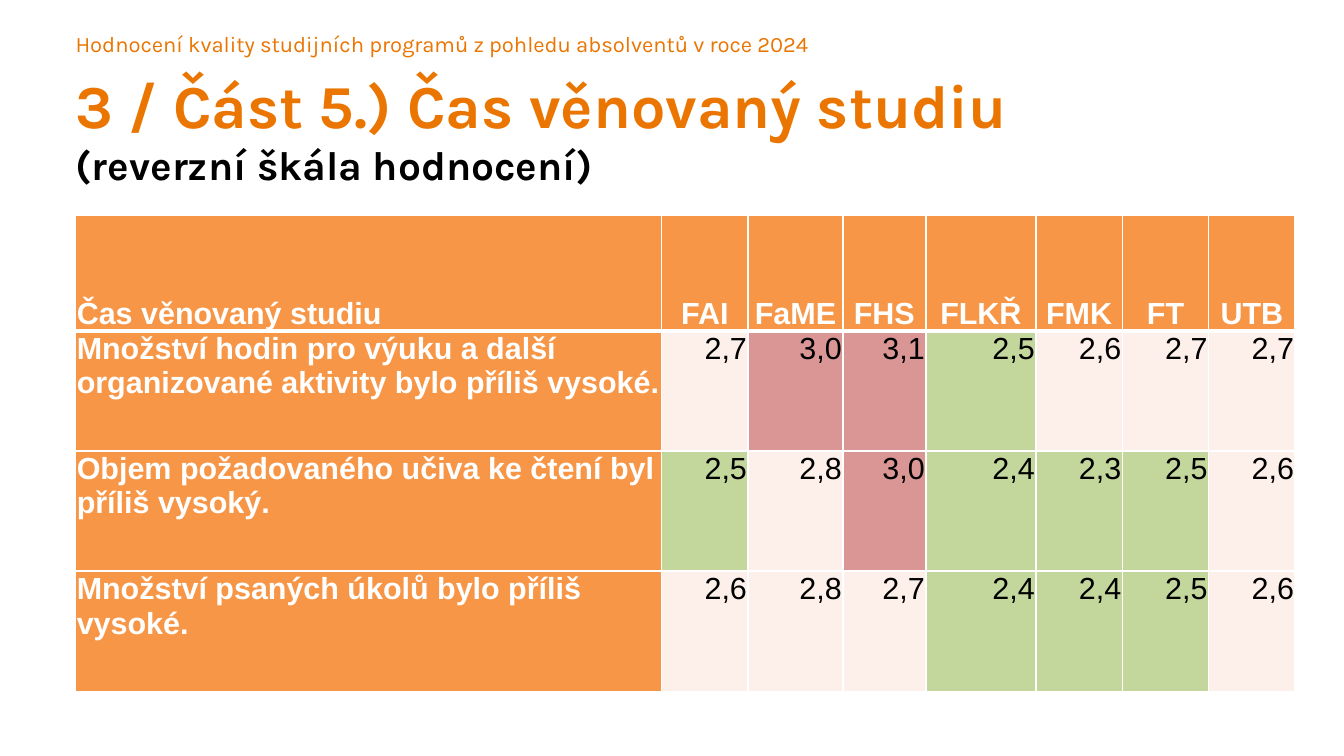
from lxml import etree
from pptx import Presentation
from pptx import util as u
from pptx.dml.color import RGBColor
from pptx.enum import text
from pptx.oxml.ns import qn

THEME = {
    "title_font": "Karla", "table_font": "Arial",
    "accent": "EA7500", "black": "000000", "white": "FFFFFF",
    "label": "F79646", "high": "D99694", "low": "C3D69B", "middle": "FDEFE9",
    "kicker": 13, "title": 36, "subtitle": 24, "table": 18,
}
KICKER = "Hodnocení kvality studijních programů z pohledu absolventů v roce 2024"
TITLE = "3 / Část 5.) Čas věnovaný studiu"
SUBTITLE = "(reverzní škála hodnocení)"
HEADER = ["Čas věnovaný studiu", "FAI", "FaME", "FHS", "FLKŘ", "FMK", "FT", "UTB"]
RATINGS = [
    ("Množství hodin pro výuku a další organizované aktivity bylo příliš vysoké.",
     [2.7, 3.0, 3.1, 2.5, 2.6, 2.7, 2.7]),
    ("Objem požadovaného učiva ke čtení byl příliš vysoký.",
     [2.5, 2.8, 3.0, 2.4, 2.3, 2.5, 2.6]),
    ("Množství psaných úkolů bylo příliš vysoké.",
     [2.6, 2.8, 2.7, 2.4, 2.4, 2.5, 2.6]),
]
LEFT = 44.64
COL_WIDTHS = [346, 51, 56, 49, 65, 51, 51, 51]
ROW_HEIGHTS = [68.4] + [71] * len(RATINGS)
LOW_LIMIT, HIGH_LIMIT = 2.5, 3.0


def add_run(p, words, size, font, color, bold=False):
    r = p.add_run()
    r.text = words
    r.font.size = u.Pt(THEME[size])
    r.font.name = THEME[font]
    r.font.bold = bold
    r.font.color.rgb = RGBColor.from_string(THEME[color])


def add_text(s, top, width, height, lines):
    sp = s.shapes.add_textbox(u.Pt(LEFT), u.Pt(top), u.Pt(width), u.Pt(height))
    tf = sp.text_frame
    tf.word_wrap = True
    tf.margin_left = tf.margin_top = tf.margin_right = tf.margin_bottom = 0
    for i, (words, size, color, bold) in enumerate(lines):
        p = tf.add_paragraph() if i else tf.paragraphs[0]
        add_run(p, words, size, "title_font", color, bold)


def set_borders(cell, top, bottom):
    tcPr = cell._tc.get_or_add_tcPr()
    edges = [("a:lnL", 1), ("a:lnR", 1), ("a:lnT", top), ("a:lnB", bottom)]
    for i, (tag, width) in enumerate(edges):
        ln = etree.Element(qn(tag), w=str(u.Pt(width)))
        fill = etree.SubElement(ln, qn("a:solidFill"))
        etree.SubElement(fill, qn("a:srgbClr"), val=THEME["white"])
        tcPr.insert(i, ln)


def fill_cell(cell, words, fill, color, bold, align, side=0.7, top=0.7):
    cell.margin_left = cell.margin_right = u.Pt(side)
    cell.margin_top, cell.margin_bottom = u.Pt(top), 0
    cell.fill.solid()
    cell.fill.fore_color.rgb = RGBColor.from_string(THEME[fill])
    p = cell.text_frame.paragraphs[0]
    p.alignment = align
    add_run(p, words, "table", "table_font", color, bold)


def rating_fill(value):
    if value >= HIGH_LIMIT:
        return "high"
    return "low" if value <= LOW_LIMIT else "middle"


def add_ratings(s):
    tbl = s.shapes.add_table(
        len(ROW_HEIGHTS), len(COL_WIDTHS), u.Pt(LEFT), u.Pt(126.9),
        u.Pt(sum(COL_WIDTHS)), u.Pt(sum(ROW_HEIGHTS))).table
    tbl.horz_banding = False
    for col, width in zip(tbl.columns, COL_WIDTHS):
        col.width = u.Pt(width)
    for row, height in zip(tbl.rows, ROW_HEIGHTS):
        row.height = u.Pt(height)
    align = text.PP_ALIGN
    for c, words in enumerate(HEADER):
        cell = tbl.cell(0, c)
        cell.vertical_anchor = text.MSO_ANCHOR.BOTTOM
        if c:
            fill_cell(cell, words, "label", "white", True, align.CENTER, 3.6, 0)
            cell.text_frame.paragraphs[0].line_spacing = 1.5
        else:
            fill_cell(cell, words, "label", "white", True, align.LEFT)
        set_borders(cell, 1, 3)
    for i, (question, values) in enumerate(RATINGS, 1):
        fill_cell(tbl.cell(i, 0), question, "label", "white", True, align.LEFT)
        for c, value in enumerate(values, 1):
            words = f"{value:.1f}".replace(".", ",")
            fill_cell(tbl.cell(i, c), words, rating_fill(value), "black", False, align.RIGHT)
        for cell in tbl.rows[i].cells:
            set_borders(cell, 3 if i == 1 else 1, 1)


def main():
    prs = Presentation()
    prs.slide_width, prs.slide_height = u.Pt(793.44), u.Pt(446.4)
    s = prs.slides.add_slide(prs.slide_layouts[6])
    add_text(s, 18, 714, 16, [(KICKER, "kicker", "accent", False)])
    add_text(s, 39.6, 733, 76, [(TITLE, "title", "accent", True),
                                (SUBTITLE, "subtitle", "black", True)])
    add_ratings(s)
    prs.save("out.pptx")


if __name__ == "__main__":
    main()
